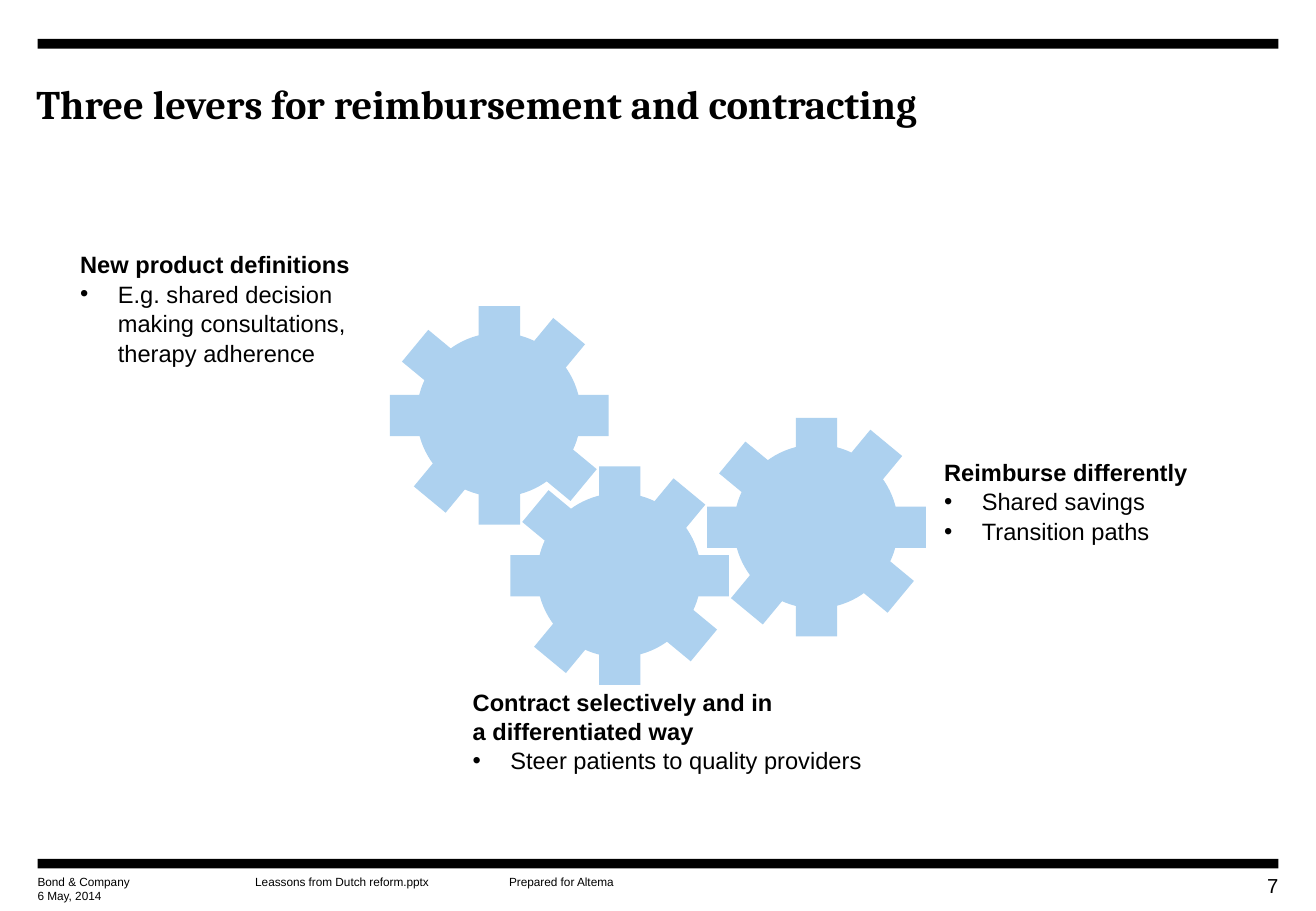
from dataclasses import dataclass

from lxml.etree import SubElement
from pptx import Presentation
from pptx.dml.color import RGBColor
from pptx.enum.shapes import MSO_SHAPE
from pptx.enum.text import MSO_ANCHOR, MSO_AUTO_SIZE, PP_ALIGN
from pptx.oxml.ns import qn
from pptx.util import Pt

EMU_PER_PX = 9144
COMPARISON_LAYOUT = 4


@dataclass(frozen=True)
class Theme:
    """Colours, fonts and type sizes of the slide."""
    ink: RGBColor = RGBColor(0, 0, 0)
    gear: RGBColor = RGBColor(0xAD, 0xD1, 0xEF)
    heading_font: str = "Cambria"
    body_font: str = "Arial"
    title_size: int = 24
    lever_size: int = 14
    number_size: int = 12
    footer_size: int = 7


THEME = Theme()

LEVERS = [
    ((66, 205, 262, 94), ["New product definitions"],
     ["E.g. shared decision making consultations, therapy adherence"]),
    ((777, 376, 224, 94), ["Reimburse differently"],
     ["Shared savings", "Transition paths"]),
    ((389, 565, 340, 94), ["Contract selectively and in", "a differentiated way"],
     ["Steer patients to quality providers"]),
]
GEAR_CORNERS = [(582, 344), (420, 384), (321, 252)]
GEAR_SIZE = 180
FOOTER_ITEMS = [
    ((0, 0, 150, 12), "Bond & Company"),
    ((0, 12, 150, 12), "6 May, 2014"),
    ((179, 0, 185, 12), "Leassons from Dutch reform.pptx"),
    ((388, 0, 150, 12), "Prepared for Altema"),
]


def px(*lengths):
    """Turn pixel lengths into EMU."""
    return [length * EMU_PER_PX for length in lengths]


def place(shape, box):
    """Move a shape to a pixel box."""
    shape.left, shape.top, shape.width, shape.height = px(*box)


def prepare_frame(frame):
    """Give a text frame no insets, wrapping and top alignment."""
    frame.margin_left = frame.margin_top = frame.margin_right = frame.margin_bottom = 0
    frame.word_wrap = True
    frame.auto_size = MSO_AUTO_SIZE.NONE
    frame.vertical_anchor = MSO_ANCHOR.TOP


def format_paragraph(paragraph, font_name, size, bold=False, align=PP_ALIGN.LEFT):
    """Set alignment, spacing and font of a paragraph."""
    paragraph.alignment = align
    paragraph.space_before = paragraph.space_after = Pt(0)
    for run in paragraph.runs:
        run.font.name = font_name
        run.font.size = Pt(size)
        run.font.bold = bold
        run.font.color.rgb = THEME.ink


def set_bullet(paragraph, bulleted):
    """Turn the bullet and hanging indent of a paragraph on or off."""
    properties = paragraph._p.get_or_add_pPr()
    indent = px(31)[0] if bulleted else 0
    properties.set("marL", str(indent))
    properties.set("indent", str(-indent))
    if bulleted:
        SubElement(properties, qn("a:buFont"), typeface=THEME.body_font)
        SubElement(properties, qn("a:buChar"), char="•")
    else:
        SubElement(properties, qn("a:buNone"))


def add_filled(shapes, kind, box, color):
    """Add a plain filled shape without a line or shadow."""
    shape = shapes.add_shape(kind, *px(*box))
    shape.fill.solid()
    shape.fill.fore_color.rgb = color
    shape.line.fill.background()
    shape.shadow.inherit = False
    return shape


def add_label(slide, box, text, size, align=PP_ALIGN.LEFT):
    """Add a one-line text box."""
    frame = slide.shapes.add_textbox(*px(*box)).text_frame
    prepare_frame(frame)
    frame.text = text
    format_paragraph(frame.paragraphs[0], THEME.body_font, size, align=align)


def fill_title(placeholder, box, text):
    """Place and format the slide title."""
    place(placeholder, box)
    prepare_frame(placeholder.text_frame)
    placeholder.text_frame.text = text
    format_paragraph(placeholder.text_frame.paragraphs[0],
                     THEME.heading_font, THEME.title_size, bold=True)


def fill_lever(placeholder, box, headings, bullets):
    """Place a lever with its bold heading lines and bullets."""
    place(placeholder, box)
    frame = placeholder.text_frame
    prepare_frame(frame)
    frame.text = "\n".join(headings + bullets)
    for index, paragraph in enumerate(frame.paragraphs):
        is_heading = index < len(headings)
        format_paragraph(paragraph, THEME.body_font, THEME.lever_size, bold=is_heading)
        paragraph.line_spacing = 1.04
        set_bullet(paragraph, not is_heading)


def add_gear(slide, box):
    """Group four crossed bars and a disc into a gear that fills the box."""
    left, top, width, height = box
    bar_width, disc = 34, 135
    gear = slide.shapes.add_group_shape()
    for rotation in (0, 270, 309.6, 39.6):
        bar_box = (left + (width - bar_width) // 2, top, bar_width, height)
        bar = add_filled(gear.shapes, MSO_SHAPE.RECTANGLE, bar_box, THEME.gear)
        bar.rotation = rotation
    disc_box = (left + (width - disc) // 2, top + (height - disc) // 2, disc, disc)
    add_filled(gear.shapes, MSO_SHAPE.OVAL, disc_box, THEME.gear)


def add_footer(slide, box):
    """Add the footer bar, its labels and the page number."""
    left, top, width, _ = box
    add_filled(slide.shapes, MSO_SHAPE.RECTANGLE, (left, top, width, 8), THEME.ink)
    for (x, y, label_width, label_height), text in FOOTER_ITEMS:
        label_box = (left + x, top + 13 + y, label_width, label_height)
        add_label(slide, label_box, text, THEME.footer_size)
    add_label(slide, (left + width - 59, top + 12, 59, 20), "7",
              THEME.number_size, PP_ALIGN.RIGHT)


def build_levers_slide(presentation):
    """Build the slide with three levers around interlocking gears."""
    slide = presentation.slides.add_slide(presentation.slide_layouts[COMPARISON_LAYOUT])
    title, *bodies = slide.placeholders
    add_filled(slide.shapes, MSO_SHAPE.RECTANGLE, (31, 32, 1021, 8), THEME.ink)
    fill_title(title, (30, 65, 1021, 78), "Three levers for reimbursement and contracting")
    for corner in GEAR_CORNERS:
        add_gear(slide, (*corner, GEAR_SIZE, GEAR_SIZE))
    for body, lever in zip(bodies, LEVERS):
        fill_lever(body, *lever)
    for unused in bodies[len(LEVERS):]:
        unused.element.getparent().remove(unused.element)
    add_footer(slide, (31, 707, 1021, 43))


def main():
    """Create and save the presentation."""
    presentation = Presentation()
    presentation.slide_width, presentation.slide_height = px(1083, 750)
    build_levers_slide(presentation)
    presentation.save("out.pptx")


if __name__ == "__main__":
    main()
